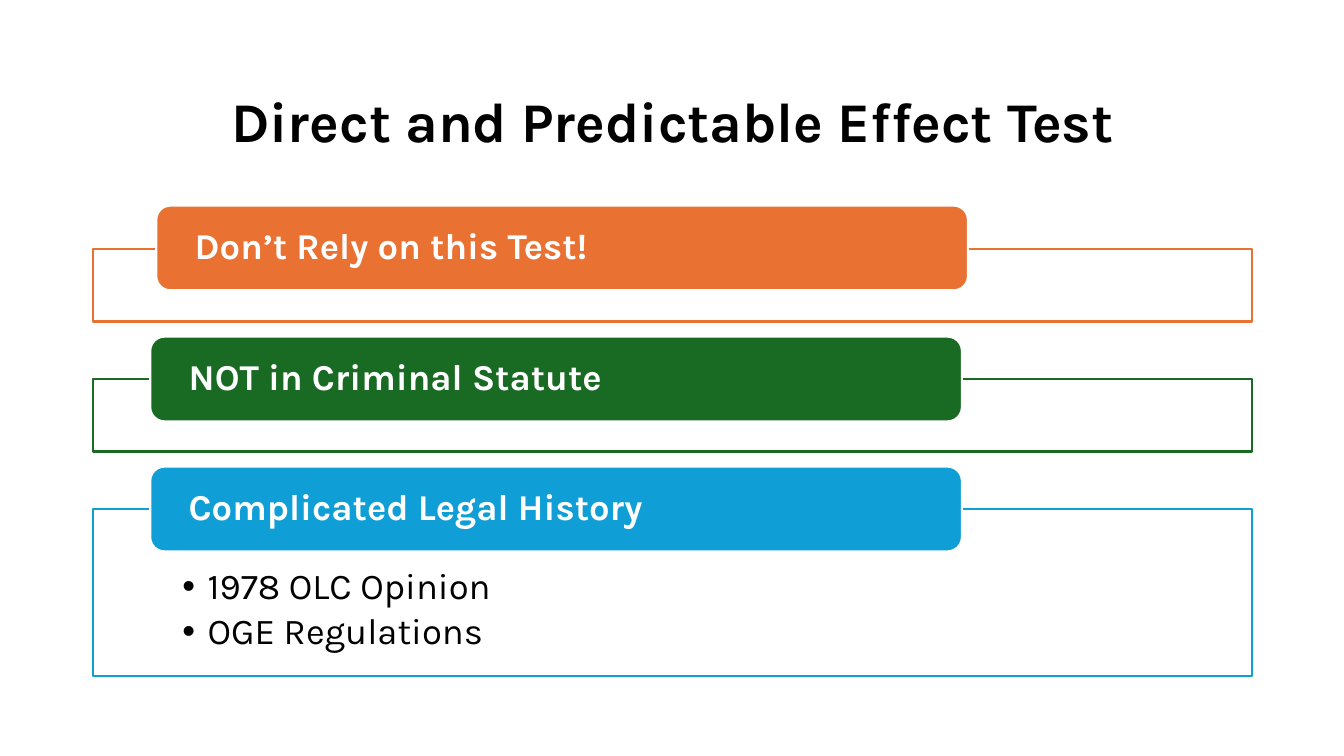
import pptx
import pptx.dml.color
import pptx.enum.shapes
import pptx.enum.text
import pptx.oxml.ns
import pptx.util
from lxml import etree

PX = 9144  # EMU per px, 100 px to the inch
FONT = "Karla"
WHITE = "FFFFFF"
BLACK = "000000"
FRAME_LEFT, FRAME_WIDTH = 92, 1150
LABEL_WIDTH, LABEL_HEIGHT = 805, 84
SHAPES = pptx.enum.shapes.MSO_SHAPE
ALIGN = pptx.enum.text.PP_ALIGN
ANCHOR = pptx.enum.text.MSO_ANCHOR

# frame top, frame height, label left, label top, colour, heading, bullets
SECTIONS = [
    (247, 72, 155, 204, "E97132", "Don’t Rely on this Test!", []),
    (376, 72, 149, 334, "196B24", "NOT in Criminal Statute", []),
    (505, 166, 149, 463, "0F9ED5", "Complicated Legal History",
     ["1978 OLC Opinion", "OGE Regulations"]),
]


def px(length):
    return pptx.util.Emu(length * PX)


def colour(value):
    return pptx.dml.color.RGBColor.from_string(value)


def set_frame(box, insets, anchor):
    """Set wrapping, the left, top, right and bottom insets, and the anchor."""
    frame = box.text_frame
    frame.word_wrap = True
    frame.vertical_anchor = anchor
    (frame.margin_left, frame.margin_top,
     frame.margin_right, frame.margin_bottom) = map(px, insets)
    return frame


def style_paragraph(para, size, value, bold=False, align=ALIGN.LEFT):
    para.alignment = align
    para.line_spacing = 0.9
    for span in para.runs:
        span.font.name = FONT
        span.font.size = pptx.util.Pt(size)
        span.font.bold = bold
        span.font.color.rgb = colour(value)


def add_bullet(para):
    properties = para._p.get_or_add_pPr()
    properties.set("marL", str(px(25)))
    properties.set("indent", str(px(-25)))
    for tag, name, value in (("a:buFont", "typeface", "Arial"),
                             ("a:buChar", "char", "•")):
        etree.SubElement(properties, pptx.oxml.ns.qn(tag)).set(name, value)


def add_panel(page, kind, place, fill, line):
    shape = page.shapes.add_shape(kind, *map(px, place))
    shape.shadow.inherit = False
    shape.fill.solid()
    shape.fill.fore_color.rgb = colour(fill)
    shape.line.color.rgb = colour(line)
    shape.line.width = pptx.util.Pt(1.5)
    return shape


def add_title(page, text):
    box = page.shapes.add_textbox(px(FRAME_LEFT), px(61), px(FRAME_WIDTH), px(124))
    frame = set_frame(box, (10, 5, 10, 5), ANCHOR.MIDDLE)
    frame.text = text
    style_paragraph(frame.paragraphs[0], 40, BLACK, True, ALIGN.CENTER)


def add_bullets(panel, items):
    frame = set_frame(panel, (89, 59, 89, 20), ANCHOR.TOP)
    frame.text = "\n".join(items)
    for para in frame.paragraphs:
        add_bullet(para)
        style_paragraph(para, 26, BLACK)
        para.space_after = pptx.util.Pt(4)


def add_section(page, top, height, label_left, label_top, accent, heading, items):
    """Add an outlined frame with a heading label over its top edge."""
    panel = add_panel(page, SHAPES.RECTANGLE,
                      (FRAME_LEFT, top, FRAME_WIDTH, height), WHITE, accent)
    if items:
        add_bullets(panel, items)
    label = add_panel(page, SHAPES.ROUNDED_RECTANGLE,
                      (label_left, label_top, LABEL_WIDTH, LABEL_HEIGHT),
                      accent, WHITE)
    frame = set_frame(label, (34, 4, 34, 4), ANCHOR.MIDDLE)
    frame.text = heading
    style_paragraph(frame.paragraphs[0], 26, WHITE, True)


def main():
    deck = pptx.Presentation()
    deck.slide_width, deck.slide_height = px(1333), px(750)
    page = deck.slides.add_slide(deck.slide_layouts[6])
    add_title(page, "Direct and Predictable Effect Test")
    for section in SECTIONS:
        add_section(page, *section)
    deck.save("out.pptx")


if __name__ == "__main__":
    main()
